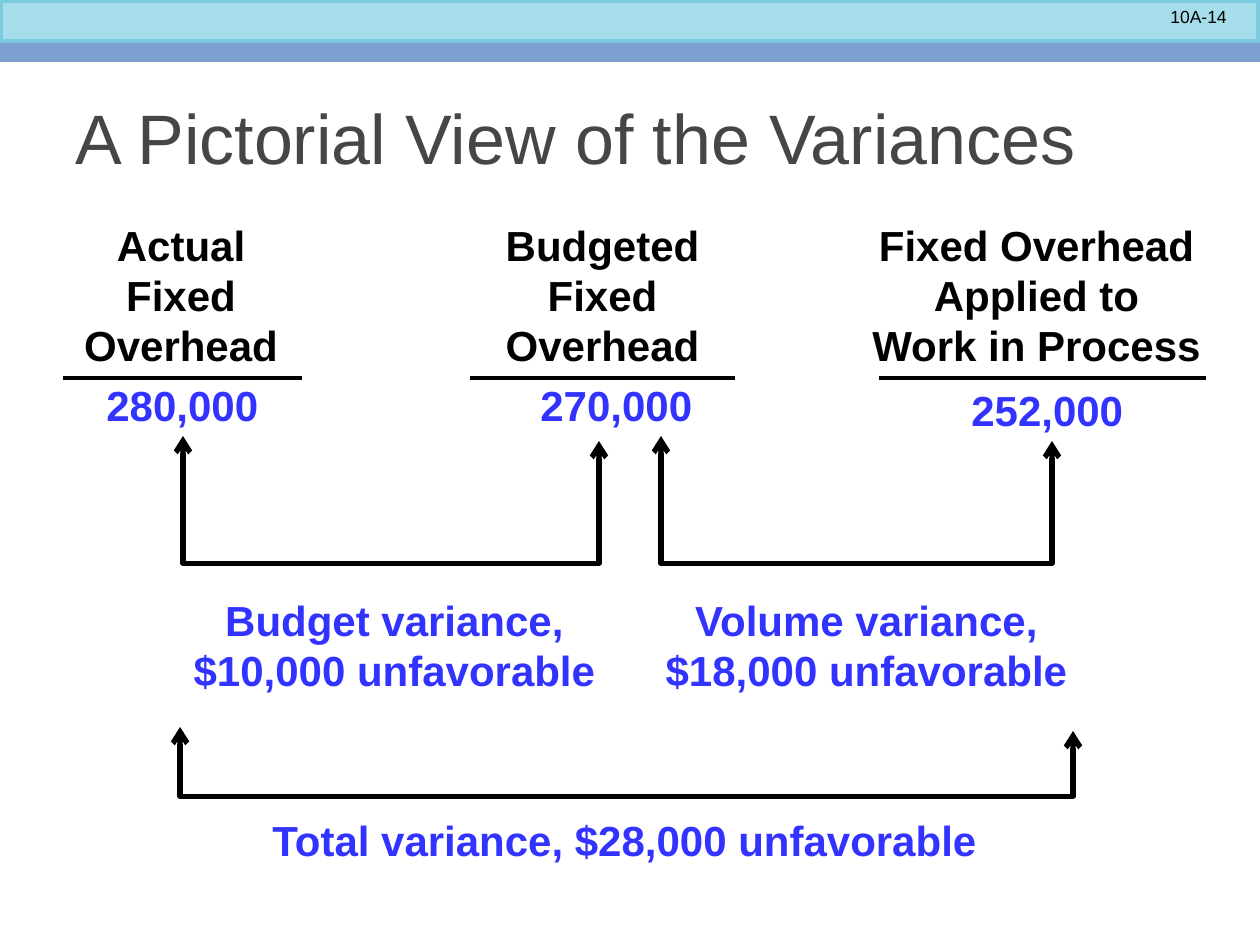
from lxml import etree
from pptx import Presentation
from pptx.dml.color import RGBColor
from pptx.enum.shapes import MSO_CONNECTOR, MSO_SHAPE
from pptx.enum.text import MSO_ANCHOR, PP_ALIGN
from pptx.oxml.ns import qn
from pptx.util import Emu, Pt

PX = 914400 // 126
BLACK = RGBColor(0x00, 0x00, 0x00)
GREY = RGBColor(0x46, 0x46, 0x46)
BLUE = RGBColor(0x33, 0x33, 0xFF)
AQUA = RGBColor(0xA6, 0xDD, 0xEA)
AQUA_EDGE = RGBColor(0x7A, 0xCB, 0xE0)
STEEL = RGBColor(0x7D, 0xA0, 0xD0)
LEFT, CENTER, RIGHT = PP_ALIGN.LEFT, PP_ALIGN.CENTER, PP_ALIGN.RIGHT
TOP, MIDDLE = MSO_ANCHOR.TOP, MSO_ANCHOR.MIDDLE
STRAIGHT, ELBOW = MSO_CONNECTOR.STRAIGHT, MSO_CONNECTOR.ELBOW
RECTANGLE = MSO_SHAPE.RECTANGLE

TITLE = {"size": Pt(40), "bold": False, "color": GREY}
PAGE_NUMBER = {"size": Pt(10), "bold": False, "color": BLACK}
HEADING = {"size": Pt(24), "bold": True, "color": BLACK}
AMOUNT = {"size": Pt(24), "bold": True, "color": BLUE}

HEADING_TOP, HEADING_HEIGHT, RULE_Y = 213, 165, 378
# heading (\v breaks a line), left, width, rule from, rule to
COLUMNS = [
    ("Actual\vFixed\vOverhead", 70, 222, 63, 302),
    ("Budgeted\vFixed\vOverhead", 491, 223, 470, 735),
    ("Fixed Overhead\vApplied to\vWork in Process", 858, 357, 879, 1206),
]
# text, left, top, width, height, alignment
AMOUNTS = [
    ("280,000", 94, 373, 179, 64, LEFT),
    ("270,000", 528, 373, 179, 64, LEFT),
    ("252,000", 959, 378, 179, 64, LEFT),
    ("Budget variance,\n$10,000 unfavorable", 179, 588, 431, 115, CENTER),
    ("Volume variance,\n$18,000 unfavorable", 651, 588, 431, 115, CENTER),
    ("Total variance, $28,000 unfavorable", 260, 808, 737, 64, LEFT),
]
# left x, right x, left tip y, right tip y, base y
BRACKETS = [
    (183, 599, 436, 441, 563),
    (661, 1052, 436, 441, 563),
    (180, 1073, 727, 731, 796),
]


def px(*lengths):
    return [Emu(round(length * PX)) for length in lengths]


def add_band(slide, top, height, color, edge=None):
    band = slide.shapes.add_shape(RECTANGLE, *px(0, top, 1260, height))
    band.shadow.inherit = False
    band.fill.solid()
    band.fill.fore_color.rgb = color
    if edge is None:
        band.line.fill.background()
    else:
        band.line.color.rgb = edge
        band.line.width = Pt(4)


def add_text(slide, text, box, style, align=LEFT, anchor=TOP, wrap=False):
    frame = slide.shapes.add_textbox(*px(*box)).text_frame
    frame.word_wrap = wrap
    frame.vertical_anchor = anchor
    frame.text = text
    for paragraph in frame.paragraphs:
        paragraph.alignment = align
        for run in paragraph.runs:
            run.font.name = "Arial"
            run.font.color.rgb = style["color"]
            for key in ("size", "bold"):
                setattr(run.font, key, style[key])


def add_line(slide, kind, start, end, width):
    line = slide.shapes.add_connector(kind, *px(*start, *end))
    line.line.color.rgb = BLACK
    line.line.width = Pt(width)
    etree.SubElement(line._element.spPr, qn("a:effectLst"))
    return line


def add_bracket(slide, left, right, left_tip, right_tip, base):
    """Join two upward arrows by a base: an elbow connector turned by 270 degrees."""
    rise, span = right_tip - left_tip, right - left
    mid_x, mid_y = (left + right) / 2, (left_tip + right_tip) / 2
    bracket = add_line(slide, ELBOW,
                       (mid_x + rise / 2, mid_y - span / 2),
                       (mid_x - rise / 2, mid_y + span / 2), 3)
    properties = bracket._element.spPr
    properties.find(qn("a:xfrm")).set("rot", str(270 * 60000))
    geometry = properties.find(qn("a:prstGeom"))
    depth = round((base - left_tip) / rise * 100000)
    etree.SubElement(geometry.find(qn("a:avLst")), qn("a:gd"),
                     name="adj1", fmla=f"val {depth}")
    outline = properties.find(qn("a:ln"))
    for end in ("a:headEnd", "a:tailEnd"):
        etree.SubElement(outline, qn(end), type="arrow")


def main():
    deck = Presentation()
    deck.slide_width, deck.slide_height = px(1260, 945)
    slide = deck.slides.add_slide(deck.slide_layouts[6])

    add_band(slide, 0, 43, AQUA, AQUA_EDGE)
    add_band(slide, 50, 12, STEEL)
    add_band(slide, 43, 12, STEEL)
    add_text(slide, "10A-14", (1071, 0, 168, 34), PAGE_NUMBER, RIGHT, wrap=True)
    add_text(slide, "A Pictorial View of the Variances", (63, 63, 1134, 147),
             TITLE, anchor=MIDDLE, wrap=True)

    for heading, left, width, rule_from, rule_to in COLUMNS:
        add_line(slide, STRAIGHT, (rule_from, RULE_Y), (rule_to, RULE_Y), 2)
        add_text(slide, heading, (left, HEADING_TOP, width, HEADING_HEIGHT),
                 HEADING, CENTER)
    for text, left, top, width, height, align in AMOUNTS:
        add_text(slide, text, (left, top, width, height), AMOUNT, align)
    for bracket in BRACKETS:
        add_bracket(slide, *bracket)

    deck.save("out.pptx")


if __name__ == "__main__":
    main()
